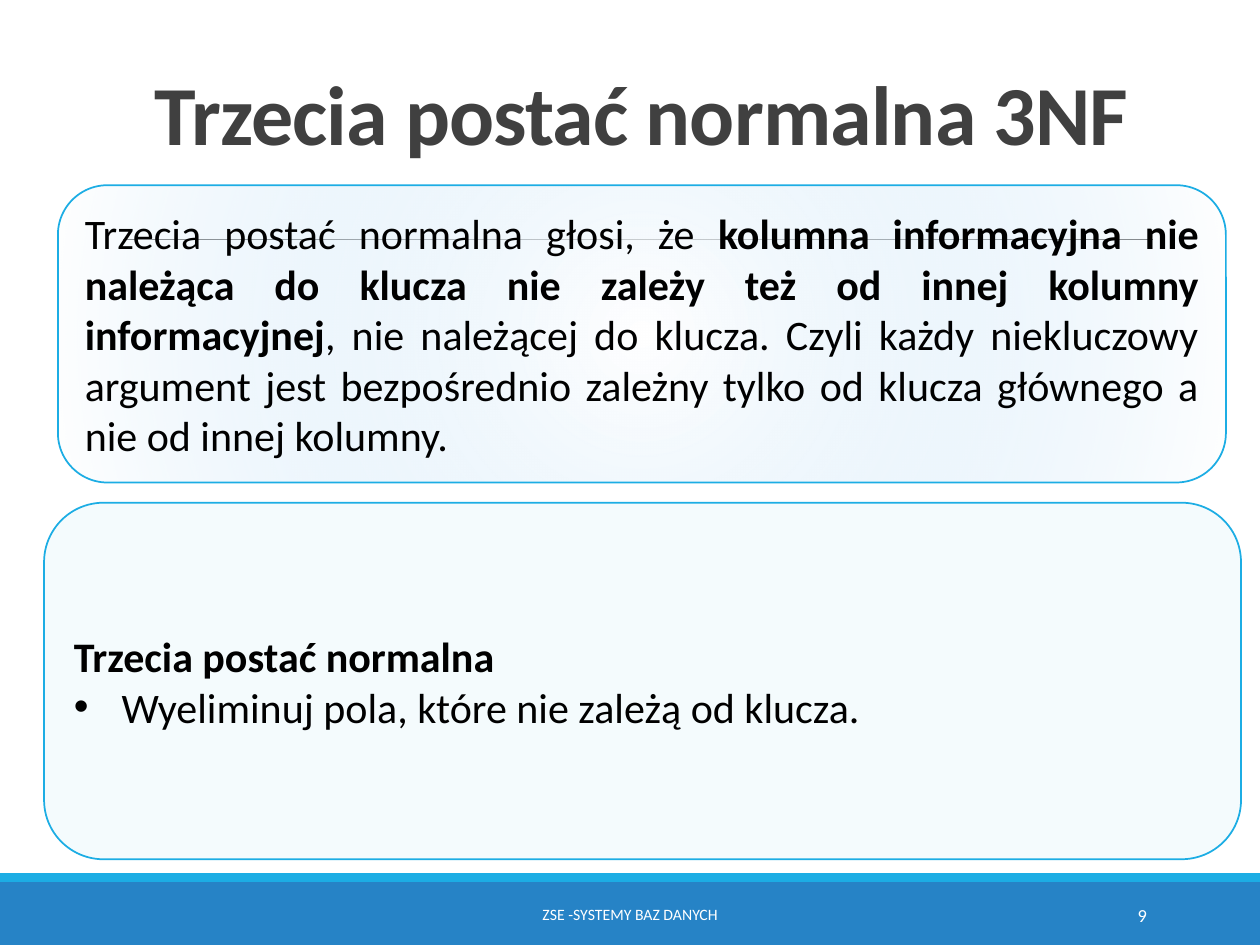
from lxml.etree import SubElement
from pptx import Presentation
from pptx.dml.color import RGBColor
from pptx.enum.shapes import MSO_CONNECTOR, MSO_SHAPE
from pptx.enum.text import MSO_ANCHOR, MSO_AUTO_SIZE, PP_ALIGN
from pptx.oxml import parse_xml
from pptx.oxml.ns import nsdecls, qn
from pptx.util import Inches, Pt

COLUMNS, ROWS = 10, 7.5
COLORS = {
    "footer": "2683C6",
    "accent": "1CADE4",
    "rule": "808080",
    "title": "404040",
    "text": "000000",
    "light": "FFFFFF",
    "glow": "A4D3F5",
    "panel": "D2EFFA",
}


def rgb(name):
    return RGBColor.from_string(COLORS[name])


class SlideBuilder:
    """Draws on one slide, with lengths in grid columns and rows."""

    font = "Calibri"

    def __init__(self, presentation):
        self.column = presentation.slide_width / COLUMNS
        self.row = presentation.slide_height / ROWS
        self.slide = presentation.slides.add_slide(presentation.slide_layouts[5])

    def box(self, left, top, width, height):
        return (round(left * self.column), round(top * self.row),
                round(width * self.column), round(height * self.row))

    def fill_text(self, shape, paragraphs, size, color, align=PP_ALIGN.LEFT,
                  anchor=MSO_ANCHOR.MIDDLE):
        """Fill a shape with paragraphs, each a list of (text, bold) runs."""
        frame = shape.text_frame
        settings = {"word_wrap": True, "auto_size": MSO_AUTO_SIZE.NONE,
                    "vertical_anchor": anchor}
        for name, value in settings.items():
            setattr(frame, name, value)
        font_settings = {"name": self.font, "size": Pt(size)}
        for index, runs in enumerate(paragraphs):
            paragraph = frame.add_paragraph() if index else frame.paragraphs[0]
            paragraph.alignment = align
            for text, bold in runs:
                run = paragraph.add_run()
                run.text = text
                for name, value in {**font_settings, "bold": bold}.items():
                    setattr(run.font, name, value)
                run.font.color.rgb = rgb(color)
        return frame

    def title(self, box, text):
        shape = self.slide.shapes.title
        names = ("left", "top", "width", "height")
        for name, value in zip(names, self.box(*box)):
            setattr(shape, name, value)
        frame = self.fill_text(shape, [[(text, True)]], 48, "title",
                               anchor=MSO_ANCHOR.BOTTOM)
        paragraph = frame.paragraphs[0]
        paragraph.line_spacing = 0.85
        paragraph.runs[0].font._element.set("spc", "-50")

    def text(self, box, text, size, align):
        shape = self.slide.shapes.add_textbox(*self.box(*box))
        self.fill_text(shape, [[(text, False)]], size, "light", align)

    def shape(self, kind, box, fill, line=None, opacity=100):
        shape = self.slide.shapes.add_shape(kind, *self.box(*box))
        shape.shadow.inherit = False
        shape.fill.solid()
        shape.fill.fore_color.rgb = rgb(fill)
        if opacity < 100:
            color = shape._element.spPr.find(qn("a:solidFill"))[0]
            SubElement(color, qn("a:alpha"), val=str(opacity * 1000))
        if line:
            shape.line.color.rgb = rgb(line)
            shape.line.width = Pt(1)
        else:
            shape.line.fill.background()
        return shape

    def panel(self, box, paragraphs, fill, opacity, align=PP_ALIGN.LEFT):
        shape = self.shape(MSO_SHAPE.ROUNDED_RECTANGLE, box, fill, "accent", opacity)
        self.fill_text(shape, paragraphs, 24, "text", align)
        return shape

    def glow(self, shape):
        """Swap the fill for a radial gradient that fades out at the edge."""
        stops = "".join(
            f'<a:gs pos="{position}"><a:srgbClr val="{COLORS[name]}">'
            f'<a:alpha val="{alpha}"/></a:srgbClr></a:gs>'
            for position, name, alpha in ((0, "light", 76000), (100000, "glow", 0)))
        gradient = parse_xml(
            f'<a:gradFill {nsdecls("a")} rotWithShape="1"><a:gsLst>{stops}</a:gsLst>'
            '<a:path path="circle"><a:fillToRect l="50000" t="50000" r="50000" '
            'b="50000"/></a:path></a:gradFill>')
        properties = shape._element.spPr
        properties.replace(properties.find(qn("a:solidFill")), gradient)

    def bullet(self, paragraph, indent):
        properties = paragraph._p.get_or_add_pPr()
        properties.set("marL", str(Inches(indent)))
        properties.set("indent", str(-Inches(indent)))
        SubElement(properties, qn("a:buFont"), typeface="Arial")
        SubElement(properties, qn("a:buChar"), char="•")

    def rule(self, left, right, top):
        start_x, y, width, _ = self.box(left, top, right - left, 0)
        connector = self.slide.shapes.add_connector(
            MSO_CONNECTOR.STRAIGHT, start_x, y, start_x + width, y)
        connector.line.color.rgb = rgb("rule")
        connector.line.width = Pt(0.5)
        SubElement(connector._element.spPr, qn("a:effectLst"))


def main():
    presentation = Presentation()
    presentation.slide_width = Inches(10)
    presentation.slide_height = Inches(7.5)
    builder = SlideBuilder(presentation)

    builder.shape(MSO_SHAPE.RECTANGLE, (0, 7, COLUMNS, 0.5), "footer")
    builder.shape(MSO_SHAPE.RECTANGLE, (0, 6.93, COLUMNS, 0.07), "accent")
    builder.rule(0.98, 9.15, 1.9)
    builder.title((1.13, 0.36, 7.96, 0.98), "Trzecia postać normalna 3NF")
    builder.text((8.12, 7.06, 1.08, 0.4), "9", 10.5, PP_ALIGN.RIGHT)

    definition = builder.panel((0.46, 1.47, 9.27, 2.36), [[
        ("Trzecia postać normalna głosi, że ", False),
        ("kolumna informacyjna nie należąca do klucza nie zależy też od innej "
         "kolumny informacyjnej", True),
        (", nie należącej do klucza. Czyli każdy niekluczowy argument jest "
         "bezpośrednio zależny tylko od klucza głównego a nie od innej kolumny.",
         False),
    ]], "glow", 100, PP_ALIGN.JUSTIFY)
    builder.glow(definition)

    summary = builder.panel((0.35, 3.99, 9.5, 2.83), [
        [("Trzecia postać normalna", True)],
        [("Wyeliminuj pola, które nie zależą od klucza.", False)],
    ], "panel", 23)
    builder.bullet(summary.text_frame.paragraphs[1], 0.38)

    builder.text((3.02, 7.06, 3.96, 0.4), "ZSE -SYSTEMY BAZ DANYCH", 9,
                 PP_ALIGN.CENTER)
    presentation.save("out.pptx")


if __name__ == "__main__":
    main()
